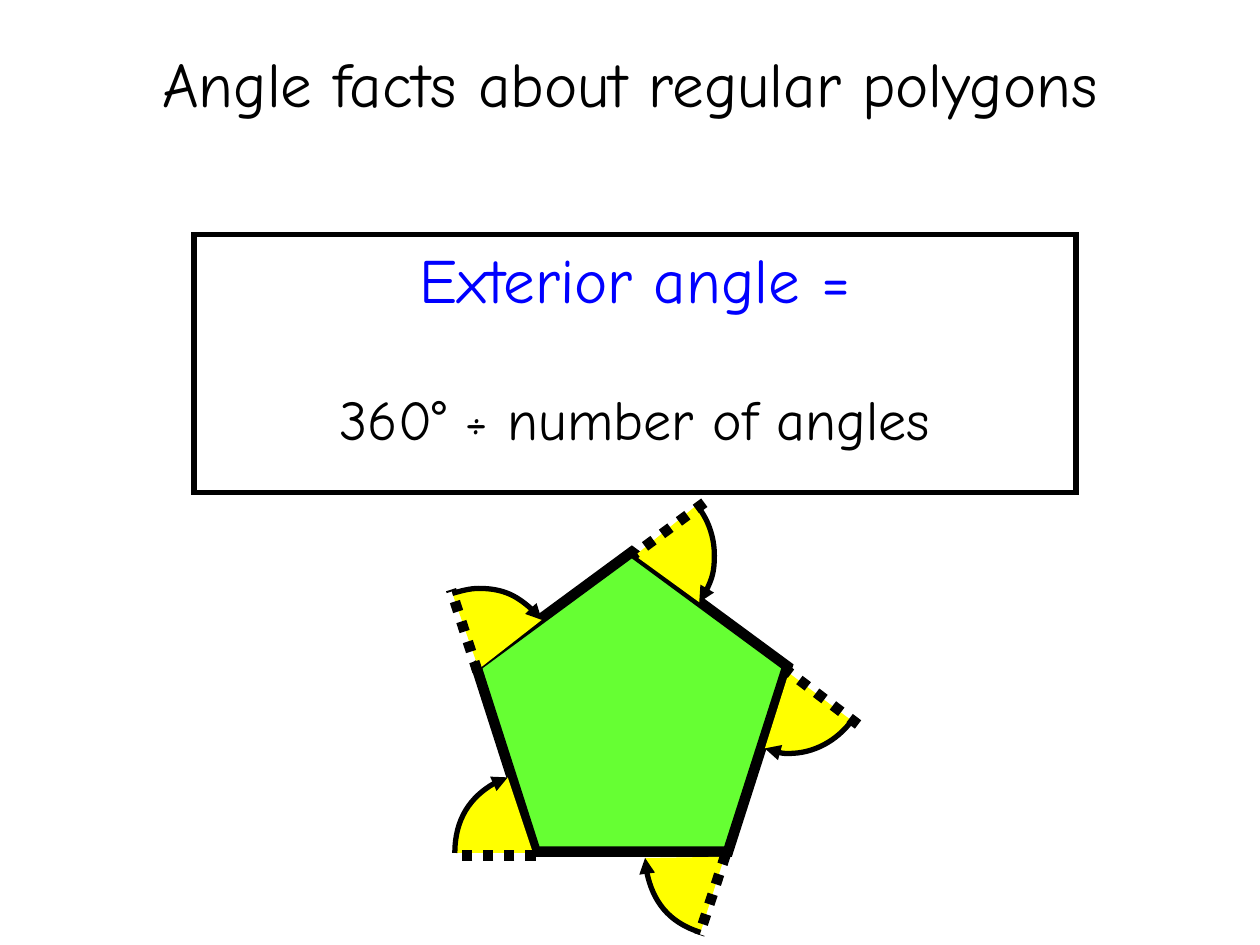
from copy import deepcopy
from lxml.etree import SubElement
from pptx import Presentation
from pptx.dml.color import RGBColor
from pptx.enum.dml import MSO_LINE
from pptx.enum.shapes import MSO_CONNECTOR as CONNECTOR, MSO_SHAPE as SHAPE
from pptx.enum.text import MSO_ANCHOR as ANCHOR, PP_ALIGN as ALIGN
from pptx.oxml.ns import qn
from pptx.util import Pt

PX = 9144
FONT = "Comic Neue"
COLORS = {"ink": "000000", "paper": "FFFFFF", "heading": "0000FF",
          "polygon": "66FF33", "angle": "FFFF00"}

ARCS = [
    ([(359, 471), (366, 469), (373, 467), (380, 467),
      (400, 467), (418, 477), (430, 492)], (380, 531)),
    ([(361, 677), (361, 650), (378, 625), (403, 617)], (423, 677)),
    ([(556, 740), (530, 732), (513, 708), (512, 681)], (575, 680)),
    ([(676, 572), (664, 588), (646, 598), (626, 598),
      (620, 598), (613, 596), (607, 594)], (626, 534)),
    ([(553, 401), (562, 412), (567, 426), (567, 441),
      (567, 454), (563, 467), (555, 478)], (504, 441)),
]
EXTENSIONS = [
    ((559, 399), (502, 441)),
    ((681, 575), (623, 531)),
    ((576, 678), (555, 742)),
    ((425, 679), (359, 679)),
    ((379, 533), (358, 468)),
]


def px(*lengths):
    """Turn pixel lengths into EMU."""
    return [length * PX for length in lengths]


def color(key):
    """Look up a palette colour."""
    return RGBColor.from_string(COLORS[key])


def stroke(shape, width):
    """Give a shape or connector a black line."""
    shape.line.color.rgb = color("ink")
    shape.line.width = Pt(width)


def outline(shape):
    """Return the line element of a shape."""
    return shape._element.spPr.find(qn("a:ln"))


def paint(shape, fill, width):
    """Set fill and mitred outline, and drop the shadow."""
    shape.shadow.inherit = False
    shape.fill.solid()
    shape.fill.fore_color.rgb = color(fill)
    stroke(shape, width)
    SubElement(outline(shape), qn("a:miter"), lim="800000")


def write(paragraph, text, size, key):
    """Add one centred run."""
    paragraph.alignment = ALIGN.CENTER
    run = paragraph.add_run()
    run.text = text
    run.font.name = FONT
    run.font.size = Pt(size)
    run.font.color.rgb = color(key)


def add_title(slide, text):
    """Fill the title placeholder."""
    title = slide.shapes.title
    title.left, title.top, title.width, title.height = px(50, 30, 900, 125)
    title.text_frame.word_wrap = False
    title.text_frame.vertical_anchor = ANCHOR.TOP
    write(title.text_frame.paragraphs[0], text, 36, "ink")


def add_rule_box(slide, heading, formula):
    """Add the framed angle rule."""
    box = slide.shapes.add_shape(SHAPE.RECTANGLE, *px(154, 186, 700, 205))
    paint(box, "paper", 3)
    frame = box.text_frame
    frame.word_wrap = True
    frame.vertical_anchor = ANCHOR.TOP
    write(frame.paragraphs[0], heading, 36, "heading")
    second = frame.add_paragraph()
    second.space_before = Pt(39)
    write(second, formula, 32, "ink")


def bend(line_segment, controls, origin):
    """Turn a straight path segment into a cubic curve."""
    line_segment.tag = qn("a:cubicBezTo")
    end = line_segment[0]
    for control in controls:
        x, y = (length - start for length, start in zip(px(*control), origin))
        end.addprevious(end.makeelement(qn("a:pt"), x=str(x), y=str(y)))


def add_angle(shapes, bezier, corner):
    """Add a yellow sector whose arc alone is drawn, ending in an arrow."""
    start, *ends = bezier[::3]
    builder = shapes.build_freeform(*px(*start))
    builder.add_line_segments([px(*point) for point in [*ends, corner]])
    sector = builder.convert_to_shape()
    paint(sector, "angle", 3)
    SubElement(outline(sector), qn("a:tailEnd"), type="triangle")

    area = next(sector._element.iter(qn("a:path")))
    for index in range(len(ends)):
        controls = bezier[3 * index + 1:3 * index + 3]
        bend(area[index + 1], controls, (sector.left, sector.top))
    arc = deepcopy(area)
    for part in arc[len(ends) + 1:]:
        arc.remove(part)
    arc.set("fill", "none")
    area.set("stroke", "0")
    area.addprevious(arc)


def add_extension(shapes, start, end):
    """Add the dotted extension of a side."""
    side = shapes.add_connector(CONNECTOR.STRAIGHT, *px(*start, *end))
    stroke(side, 6)
    side.line.dash_style = MSO_LINE.ROUND_DOT
    SubElement(side._element.spPr, qn("a:effectLst"))


def add_polygon(slide):
    """Add the pentagon with its exterior angles as one group."""
    shapes = slide.shapes.add_group_shape().shapes
    pentagon = shapes.add_shape(SHAPE.REGULAR_PENTAGON, *px(378, 438, 247, 238))
    paint(pentagon, "polygon", 6)
    for bezier, corner in ARCS:
        add_angle(shapes, bezier, corner)
    for start, end in EXTENSIONS:
        add_extension(shapes, start, end)


def main():
    """Build and save the slide."""
    deck = Presentation()
    deck.slide_width, deck.slide_height = px(1000, 750)
    slide = deck.slides.add_slide(deck.slide_layouts[5])
    add_title(slide, "Angle facts about regular polygons")
    add_rule_box(slide, "Exterior angle =", "360° ÷ number of angles")
    add_polygon(slide)
    deck.save("out.pptx")


if __name__ == "__main__":
    main()
